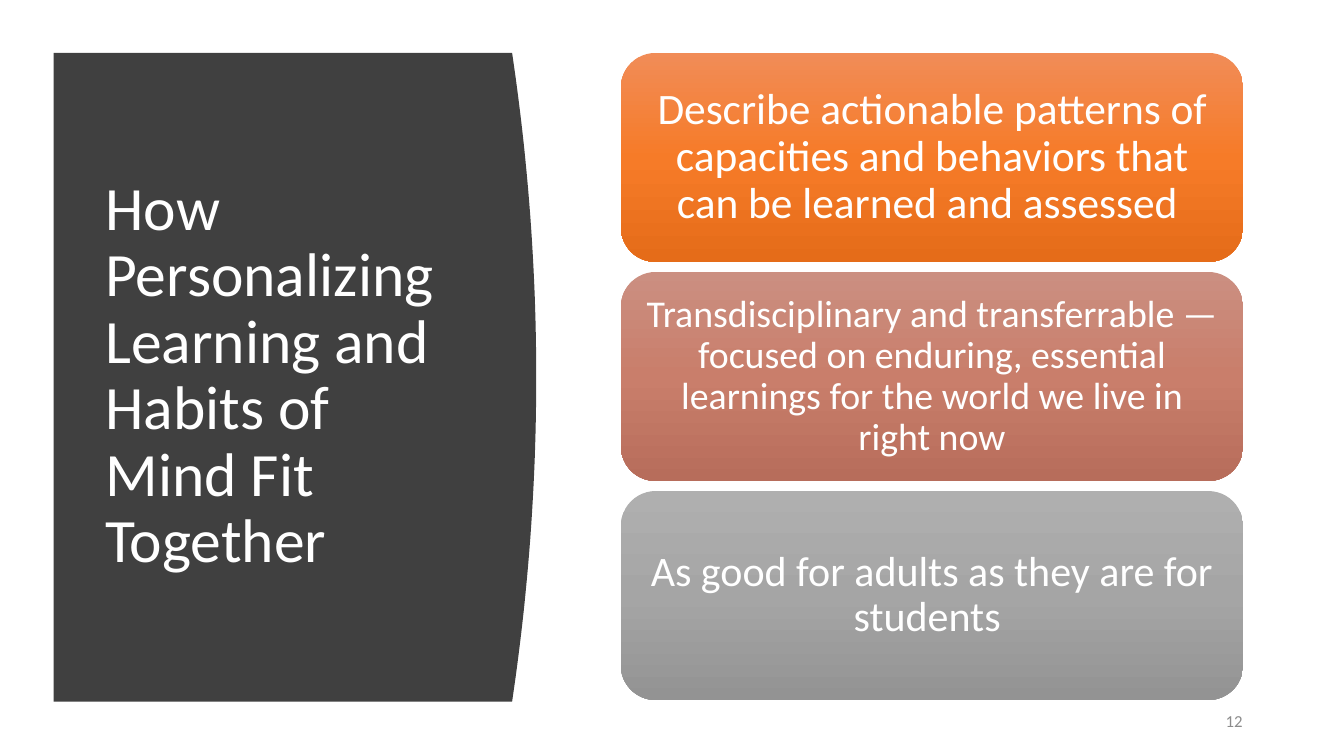
import copy
from dataclasses import dataclass

import pptx
import pptx.dml.color
import pptx.enum.shapes
import pptx.enum.text
import pptx.util

Inches = pptx.util.Inches
ALIGN = pptx.enum.text.PP_ALIGN


@dataclass(frozen=True)
class Theme:
    font: str = "Calibri"
    light: str = "FFFFFF"
    panel: str = "404040"
    muted: str = "8C8C8C"
    title_size: int = 44
    number_size: int = 12


@dataclass(frozen=True)
class Box:
    x: float
    y: float
    w: float
    h: float

    def lengths(self):
        return [Inches(v) for v in (self.x, self.y, self.w, self.h)]

    def inset(self, left, top, right, bottom):
        """Return the inner box left by four margins given as shares of this box."""
        return Box(self.x + left * self.w, self.y + top * self.h,
                   self.w * (1 - left - right), self.h * (1 - top - bottom))

    def rows(self, count, gap):
        h = (self.h - gap * (count - 1)) / count
        return [Box(self.x, self.y + i * (h + gap), self.w, h) for i in range(count)]


THEME = Theme()
SLIDE = Box(0, 0, 13.33, 7.5)
PANEL = SLIDE.inset(0.04, 0.07, 0.601, 0.072)
CARDS = SLIDE.inset(0.462, 0.07, 0.075, 0.074)
NUMBER = SLIDE.inset(0.707, 0.927, 0.068, 0.02)
CARD_GAP = 0.1
BULGE = 0.05  # share of the panel's width taken by its curved edge
CURVE_STEPS = 48

TITLE = "How Personalizing Learning and Habits of Mind Fit Together"
# text, type size, side margin, gradient from top to bottom
CARD_ITEMS = [
    ("Describe actionable patterns of capacities and behaviors that can be "
     "learned and assessed ", 31, 0.13, ("F18C57", "F67B28", "E56C19")),
    ("Transdisciplinary and transferrable — focused on enduring, essential "
     "learnings for the world we live in right now", 27, 0.11,
     ("CB8F81", "C97E6B", "B76D5B")),
    ("As good for adults as they are for students ", 30, 0.12,
     ("AFAFAF", "A5A5A5", "939393")),
]


def rgb(code):
    return pptx.dml.color.RGBColor.from_string(code)


def write(sp, text, size, color, align, spacing=0.9):
    tf = sp.text_frame
    tf.word_wrap = True
    tf.auto_size = pptx.enum.text.MSO_AUTO_SIZE.NONE
    tf.vertical_anchor = pptx.enum.text.MSO_ANCHOR.MIDDLE
    tf.text = text
    p = tf.paragraphs[0]
    p.alignment = align
    p.line_spacing = spacing
    p.font.name = THEME.font
    p.font.size = pptx.util.Pt(size)
    p.font.color.rgb = rgb(color)
    return tf


def fill_gradient(sp, colors):
    """Fill from top to bottom with three evenly spaced colours."""
    sp.fill.gradient()
    sp.fill.gradient_angle = 270
    first = sp.fill.gradient_stops[0]._gs
    first.addnext(copy.deepcopy(first))
    for i, (stop, color) in enumerate(zip(sp.fill.gradient_stops, colors)):
        stop.position = i / 2
        stop.color.rgb = rgb(color)


def add_title_panel(s, box):
    """Draw the panel with a parabolic right edge and set the title on it."""
    edge = []
    for i in range(CURVE_STEPS + 1):
        t = i / CURVE_STEPS
        bulge = BULGE * (1 - (2 * t - 1) ** 2)
        edge.append((Inches(box.x + box.w * (1 - BULGE + bulge)),
                     Inches(box.y + box.h * t)))
    left, top, _, height = box.lengths()
    builder = s.shapes.build_freeform(left, top)
    builder.add_line_segments(edge + [(left, top + height)], close=True)
    sp = builder.convert_to_shape()
    sp.shadow.inherit = False
    sp.fill.solid()
    sp.fill.fore_color.rgb = rgb(THEME.panel)
    sp.line.fill.background()

    title = s.shapes.title
    title.left, title.top, title.width, title.height = box.inset(
        0.086, 0.092, 0.134, 0.094).lengths()
    write(title, TITLE, THEME.title_size, THEME.light, ALIGN.LEFT)
    title._element.addprevious(sp._element)


def add_cards(s, box):
    for row, (text, size, margin, colors) in zip(
            box.rows(len(CARD_ITEMS), CARD_GAP), CARD_ITEMS):
        sp = s.shapes.add_shape(
            pptx.enum.shapes.MSO_SHAPE.ROUNDED_RECTANGLE, *row.lengths())
        sp.shadow.inherit = False
        sp.line.fill.background()
        fill_gradient(sp, colors)
        tf = write(sp, text, size, THEME.light, ALIGN.CENTER)
        tf.margin_left = tf.margin_right = Inches(margin)
        tf.margin_top = tf.margin_bottom = Inches(0.06)


def add_slide_number(s, box):
    sp = s.shapes.add_textbox(*box.lengths())
    write(sp, "12", THEME.number_size, THEME.muted, ALIGN.RIGHT, spacing=1.0)


def main():
    prs = pptx.Presentation()
    prs.slide_width, prs.slide_height = Inches(SLIDE.w), Inches(SLIDE.h)
    s = prs.slides.add_slide(prs.slide_layouts.get_by_name("Title Only"))
    add_title_panel(s, PANEL)
    add_cards(s, CARDS)
    add_slide_number(s, NUMBER)
    prs.save("out.pptx")


if __name__ == "__main__":
    main()
